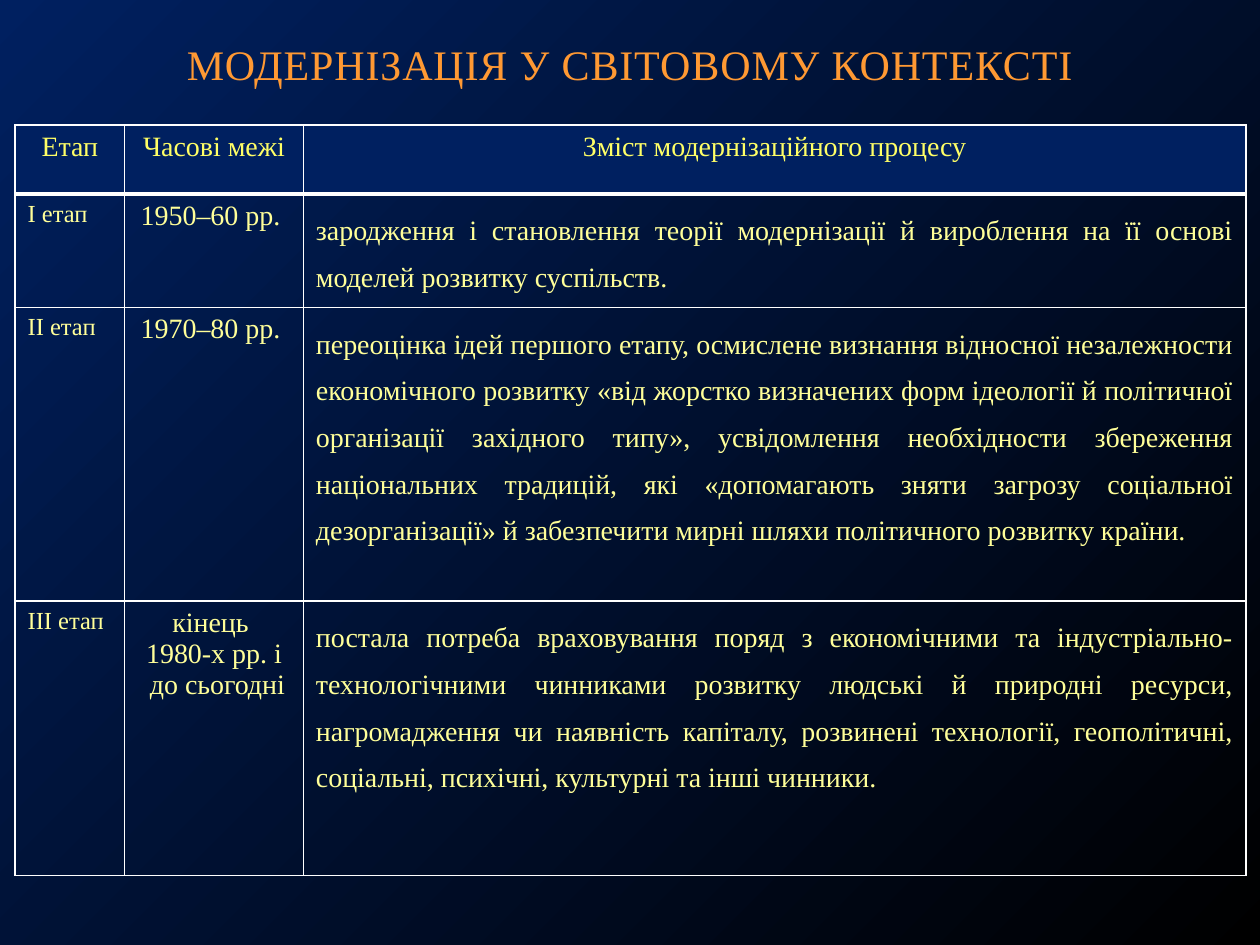
from lxml import etree
from pptx import Presentation
from pptx.dml.color import RGBColor
from pptx.enum.text import MSO_ANCHOR, PP_ALIGN
from pptx.oxml.ns import qn
from pptx.util import Pt

LEFT, CENTER, JUSTIFY = PP_ALIGN.LEFT, PP_ALIGN.CENTER, PP_ALIGN.JUSTIFY
BOTTOM = MSO_ANCHOR.BOTTOM

NAVY = RGBColor(0x00, 0x20, 0x60)
BLACK = RGBColor(0x00, 0x00, 0x00)
WHITE = RGBColor(0xFF, 0xFF, 0xFF)
ORANGE = RGBColor(0xFF, 0x99, 0x33)
YELLOW = RGBColor(0xFF, 0xFF, 0x66)
PALE_YELLOW = RGBColor(0xFF, 0xFF, 0x99)

COL_WIDTHS = [62.6, 102.2, 538.6]
ROW_HEIGHTS = [39.6, 51.1, 167.8, 157]
HEADER = ["Етап", "Часові межі", "Зміст модернізаційного процесу"]
STAGES = [
    ("I етап", "1950–60 рр. ",
     "зародження і становлення теорії модернізації й вироблення на її основі "
     "моделей розвитку суспільств."),
    ("II етап", "1970–80 рр. ",
     "переоцінка ідей першого етапу, осмислене визнання відносної незалежности "
     "економічного розвитку «від жорстко визначених форм ідеології й політичної "
     "організації західного типу», усвідомлення необхідности збереження "
     "національних традицій, які «допомагають зняти загрозу соціальної "
     "дезорганізації» й забезпечити мирні шляхи політичного розвитку країни."),
    ("III етап", "кінець \n1980-х рр. і\n до сьогодні",
     "постала потреба враховування поряд з економічними та "
     "індустріально-технологічними чинниками розвитку людські й природні ресурси, "
     "нагромадження чи наявність капіталу, розвинені технології, геополітичні, "
     "соціальні, психічні, культурні та інші чинники."),
]
BODY_STYLES = [(14, LEFT, 1), (16, CENTER, 1), (16, JUSTIFY, 1.5)]


class Deck:
    font = "Times New Roman"

    def __init__(self, width, height):
        self.prs = Presentation()
        self.prs.slide_width, self.prs.slide_height = Pt(width), Pt(height)
        self.s = self.prs.slides.add_slide(self.prs.slide_layouts[6])

    def background(self, start, end, angle):
        fill = self.s.background.fill
        fill.gradient()
        fill.gradient_angle = angle
        for stop, color in zip(fill.gradient_stops, (start, end)):
            stop.color.rgb = color

    def text(self, tf, text, size, color, align, line_spacing=1, tracking=0):
        tf.text = text
        for p in tf.paragraphs:
            p.alignment = align
            p.line_spacing = line_spacing
            for r in p.runs:
                r.font.name = self.font
                r.font.size = Pt(size)
                r.font.color.rgb = color
                if tracking:
                    r._r.get_or_add_rPr().set("spc", str(int(tracking * 100)))

    def title(self, text, x, y, w, h):
        tf = self.s.shapes.add_textbox(Pt(x), Pt(y), Pt(w), Pt(h)).text_frame
        tf.word_wrap = True
        tf.vertical_anchor = BOTTOM
        self.text(tf, text, 24, ORANGE, CENTER, tracking=0.5)

    def borders(self, cell, **widths):
        tc_pr = cell._tc.get_or_add_tcPr()
        for side in "LRTB":
            ln = etree.SubElement(tc_pr, qn(f"a:ln{side}"), w=str(Pt(widths.get(side, 1))))
            fill = etree.SubElement(ln, qn("a:solidFill"))
            etree.SubElement(fill, qn("a:srgbClr"), val=str(WHITE))

    def table(self, x, y, widths, heights, header, rows, styles):
        table = self.s.shapes.add_table(len(heights), len(widths), Pt(x), Pt(y),
                                        Pt(sum(widths)), Pt(sum(heights))).table
        table.first_row = table.horz_banding = False
        for col, width in zip(table.columns, widths):
            col.width = Pt(width)
        for row, height in zip(table.rows, heights):
            row.height = Pt(height)
        for j, text in enumerate(header):
            cell = table.cell(0, j)
            self.text(cell.text_frame, text, 16, YELLOW, CENTER)
            self.borders(cell, B=3)
            cell.fill.solid()
            cell.fill.fore_color.rgb = NAVY
        for i, texts in enumerate(rows, 1):
            for j, (text, (size, align, spacing)) in enumerate(zip(texts, styles)):
                cell = table.cell(i, j)
                self.text(cell.text_frame, text, size, PALE_YELLOW, align, spacing)
                self.borders(cell, T=3 if i == 1 else 1)
                cell.fill.background()


def main():
    deck = Deck(720, 540)
    deck.background(NAVY, BLACK, 315)
    deck.title("МОДЕРНІЗАЦІЯ У СВІТОВОМУ КОНТЕКСТІ", 48, 15, 624, 39.6)
    deck.table(8.6, 71.3, COL_WIDTHS, ROW_HEIGHTS, HEADER, STAGES, BODY_STYLES)
    deck.prs.save("out.pptx")


if __name__ == "__main__":
    main()
